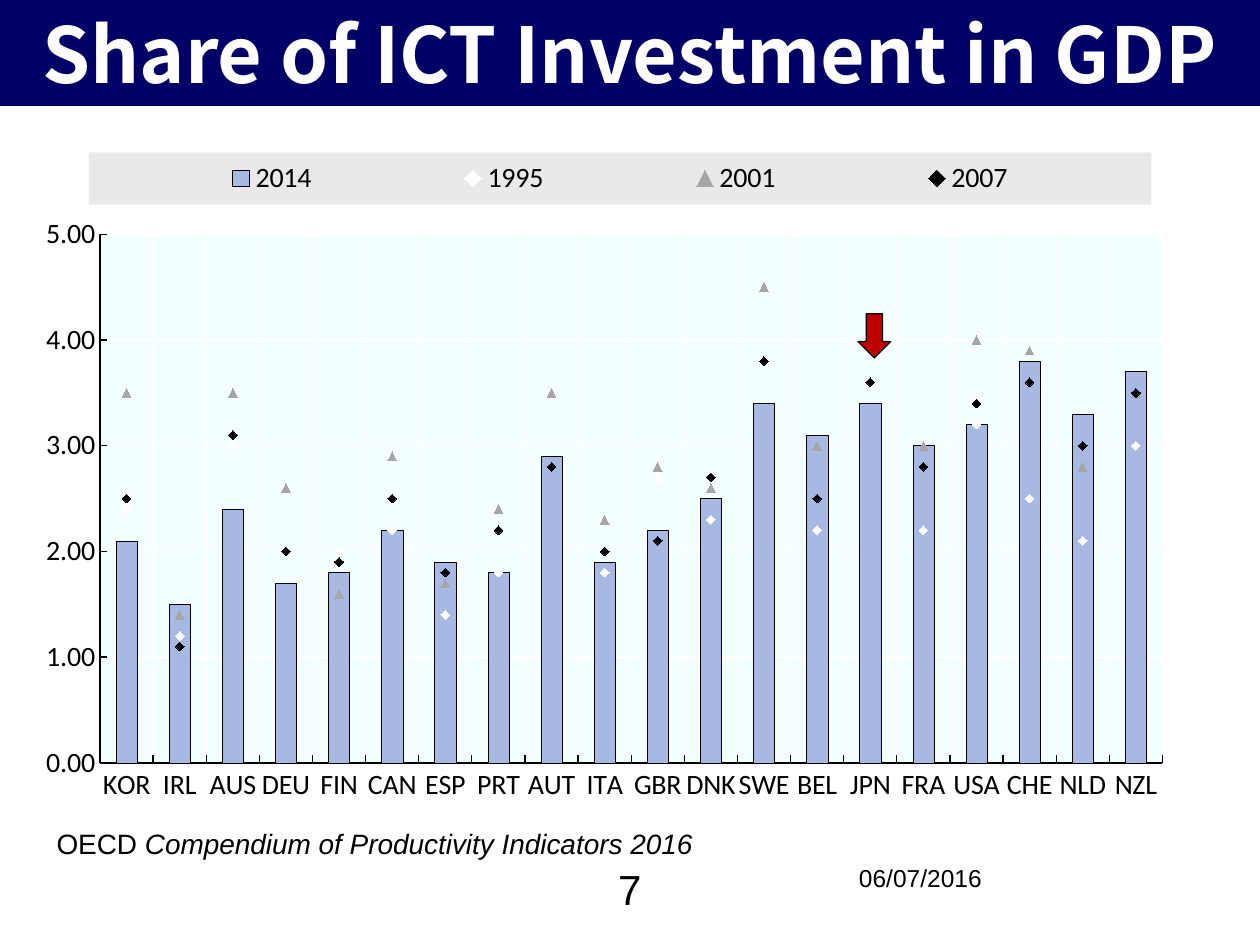
from pptx import Presentation
from pptx.chart.data import CategoryChartData
from pptx.dml.color import RGBColor
from pptx.enum.chart import XL_CHART_TYPE as ChartType, XL_LEGEND_POSITION as LegendPos
from pptx.enum.chart import XL_MARKER_STYLE as Marker, XL_TICK_MARK as Tick
from pptx.enum.shapes import MSO_SHAPE as Preset
from pptx.enum.text import MSO_ANCHOR as Anchor, MSO_AUTO_SIZE as AutoSize, PP_ALIGN as Align
from pptx.oxml import parse_xml
from pptx.oxml.ns import nsdecls, qn
from pptx.util import Pt

TITLE = "Share of ICT Investment in GDP"
SOURCE = [("OECD ", False), ("Compendium of Productivity Indicators 2016", True)]
DATE, PAGE = "06/07/2016", "7"

COUNTRIES = ["KOR", "IRL", "AUS", "DEU", "FIN", "CAN", "ESP", "PRT", "AUT", "ITA",
             "GBR", "DNK", "SWE", "BEL", "JPN", "FRA", "USA", "CHE", "NLD", "NZL"]
SHARES = {
    "2014": [2.1, 1.5, 2.4, 1.7, 1.8, 2.2, 1.9, 1.8, 2.9, 1.9,
             2.2, 2.5, 3.4, 3.1, 3.4, 3, 3.2, 3.8, 3.3, 3.7],
    "1995": [2.4, 1.2, 3, 2, 2, 2.2, 1.4, 1.8, 2.8, 1.8,
             2.7, 2.3, 3.8, 2.2, None, 2.2, 3.2, 2.5, 2.1, 3],
    "2001": [3.5, 1.4, 3.5, 2.6, 1.6, 2.9, 1.7, 2.4, 3.5, 2.3,
             2.8, 2.6, 4.5, 3, None, 3, 4, 3.9, 2.8, 3.5],
    "2007": [2.5, 1.1, 3.1, 2, 1.9, 2.5, 1.8, 2.2, 2.8, 2,
             2.1, 2.7, 3.8, 2.5, 3.6, 2.8, 3.4, 3.6, 3, 3.5],
}
MARKERS = [(Marker.DIAMOND, "white"), (Marker.TRIANGLE, "grey"), (Marker.DIAMOND, "black")]

THEME = {
    "colors": {"navy": "000066", "white": "FFFFFF", "black": "000000", "grey": "A6A6A6",
               "bar": "A7B9E3", "plot": "F4FFFF", "legend": "E9E9E9", "red": "C00000"},
    "fonts": {"title": "Noto Sans CJK JP", "body": "Arial", "chart": "Calibri"},
    "sizes": {"title": 44, "page": 24, "source": 16, "chart": 16, "date": 14, "marker": 5},
}

# left, top, width, height in points
TITLE_BOX = (0, 0, 720, 60.5)
CHART_BOX = (25.2, 40.3, 639.4, 425.5)
SOURCE_BOX = (25.2, 468.7, 425.5, 26.6)
DATE_BOX = (483.8, 489.6, 167.8, 37.4)
PAGE_BOX = (318.2, 489.6, 83.5, 37.4)
ARROW_BOX = (490.3, 179.3, 18.7, 25.2)
# left, top, width, height as shares of the chart
PLOT_AREA = (0.05, 0.22, 0.95, 0.71)
LEGEND_AREA = (0.04, 0.11, 0.95, 0.07)


def color(name):
    return RGBColor.from_string(THEME["colors"][name])


def paint(part, fill, line=None, width=0.75):
    part.fill.solid()
    part.fill.fore_color.rgb = color(fill)
    if line:
        draw_line(part.line, line, width)
    else:
        part.line.fill.background()


def draw_line(line, name, width=0.75):
    line.color.rgb = color(name)
    line.width = Pt(width)


def set_font(font, face, size, name="black", bold=False):
    font.name = THEME["fonts"][face]
    font.size = Pt(THEME["sizes"][size])
    font.color.rgb = color(name)
    font.bold = bold


def add_preset(slide, preset, box, fill, line=None):
    shape = slide.shapes.add_shape(preset, *map(Pt, box))
    shape.shadow.inherit = False
    paint(shape, fill, line)
    return shape


def add_text(slide, box, runs, size, align=Align.LEFT):
    frame = slide.shapes.add_textbox(*map(Pt, box)).text_frame
    frame.word_wrap = True
    paragraph = frame.paragraphs[0]
    paragraph.alignment = align
    for text, italic in runs:
        run = paragraph.add_run()
        run.text = text
        if italic:
            run.font.italic = True
    set_font(paragraph.font, "body", size)
    return frame


def add_title(slide):
    banner = add_preset(slide, Preset.RECTANGLE, TITLE_BOX, "navy")
    frame = banner.text_frame
    frame.word_wrap = True
    frame.vertical_anchor = Anchor.MIDDLE
    frame.margin_top = frame.margin_bottom = 0
    paragraph = frame.paragraphs[0]
    paragraph.text = TITLE
    paragraph.alignment = Align.CENTER
    set_font(paragraph.font, "title", "title", "white", bold=True)


def place(element, index, area, inner=False):
    """Give a chart part a manual layout as its child number index."""
    for old in element.findall(qn("c:layout")):
        element.remove(old)
    target = '<c:layoutTarget val="inner"/>' if inner else ""
    modes = '<c:xMode val="edge"/><c:yMode val="edge"/>'
    sides = "".join(f'<c:{side} val="{share}"/>' for side, share in zip("xywh", area))
    element.insert(index, parse_xml(
        f'<c:layout {nsdecls("c")}><c:manualLayout>{target}{modes}{sides}'
        '</c:manualLayout></c:layout>'))


def fill_background(element, name):
    element.append(parse_xml(
        f'<c:spPr {nsdecls("c", "a")}><a:solidFill><a:srgbClr val="{THEME["colors"][name]}"/>'
        '</a:solidFill><a:ln><a:noFill/></a:ln></c:spPr>'))


def move_to_line_plot(chart):
    """Turn every series but the first into a line series on the same axes."""
    bars = chart.plots[0]._element
    lines = parse_xml(f'<c:lineChart {nsdecls("c")}><c:grouping val="standard"/>'
                      '<c:varyColors val="0"/><c:marker val="1"/></c:lineChart>')
    marker_flag = lines.find(qn("c:marker"))
    for series in bars.findall(qn("c:ser"))[1:]:
        for bar_setting in series.findall(qn("c:invertIfNegative")):
            series.remove(bar_setting)
        marker_flag.addprevious(series)
    for axis in bars.findall(qn("c:axId")):
        lines.append(parse_xml(f'<c:axId {nsdecls("c")} val="{axis.get("val")}"/>'))
    bars.addnext(lines)


def style_axis(axis):
    axis.major_tick_mark = Tick.INSIDE
    axis.minor_tick_mark = Tick.NONE
    axis.has_major_gridlines = True
    draw_line(axis.major_gridlines.format.line, "white")
    draw_line(axis.format.line, "black")


def add_share_chart(slide):
    data = CategoryChartData(number_format="0.00")
    data.categories = COUNTRIES
    for year, shares in SHARES.items():
        data.add_series(year, shares)
    chart = slide.shapes.add_chart(
        ChartType.COLUMN_CLUSTERED, *map(Pt, CHART_BOX), data).chart
    chart.has_title = False
    set_font(chart.font, "chart", "chart")
    move_to_line_plot(chart)

    bars, lines = chart.plots
    bars.vary_by_categories = False
    bars.gap_width = 150
    paint(bars.series[0].format, "bar", "black", 0.25)
    for series, (symbol, fill) in zip(lines.series, MARKERS):
        series.smooth = False
        series.format.line.fill.background()
        series.marker.style = symbol
        series.marker.size = THEME["sizes"]["marker"]
        paint(series.marker.format, fill)

    style_axis(chart.category_axis)
    shares_axis = chart.value_axis
    style_axis(shares_axis)
    shares_axis.minimum_scale, shares_axis.maximum_scale = 0, 5
    shares_axis.major_unit = 1
    shares_axis.tick_labels.number_format = "0.00"
    shares_axis.tick_labels.number_format_is_linked = False

    chart.has_legend = True
    chart.legend.position = LegendPos.TOP
    chart.legend.include_in_layout = True
    place(chart.legend._element, 1, LEGEND_AREA)
    fill_background(chart.legend._element, "legend")
    plot_area = bars._element.getparent()
    place(plot_area, 0, PLOT_AREA, inner=True)
    fill_background(plot_area, "plot")


def main():
    deck = Presentation()
    deck.slide_width, deck.slide_height = Pt(720), Pt(540)
    slide = deck.slides.add_slide(deck.slide_layouts[6])
    add_title(slide)
    add_text(slide, DATE_BOX, [(DATE, False)], "date")
    add_text(slide, PAGE_BOX, [(PAGE, False)], "page", Align.CENTER)
    add_share_chart(slide)
    add_text(slide, SOURCE_BOX, SOURCE, "source").auto_size = AutoSize.SHAPE_TO_FIT_TEXT
    add_preset(slide, Preset.DOWN_ARROW, ARROW_BOX, "red", "black")
    deck.save("out.pptx")


if __name__ == "__main__":
    main()
